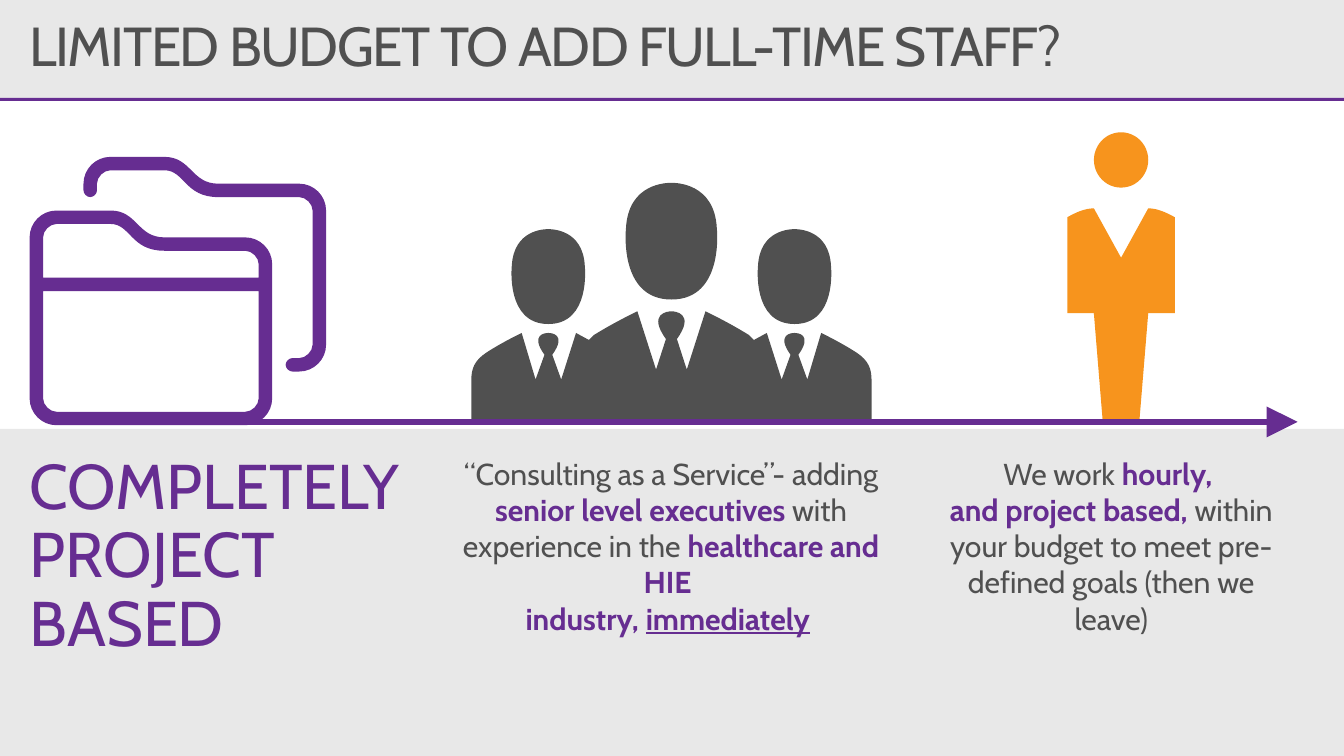
import lxml.etree
import pptx
import pptx.dml.color
import pptx.enum.shapes
import pptx.enum.text
import pptx.oxml.ns
import pptx.util

Pt = pptx.util.Pt
qn = pptx.oxml.ns.qn
ALIGN = pptx.enum.text.PP_ALIGN
SHAPES = pptx.enum.shapes.MSO_SHAPE
WIDTH, HEIGHT = 979.2, 550.8
GROUND = 307.4
COLORS = {"purple": "662D91", "gray": "505050", "band": "E8E8E8", "orange": "F7941D"}

# Outlines: a pair is a corner, six numbers are a curve.
# The folder lies on a grid of 22 by 20 units.
FOLDER = [
    [(16, 6), (10, 6), (8, 6, 8, 4, 6, 4), (2, 4), (0.9, 4, 0, 4.9, 0, 6), (0, 18),
     (0, 19.1, 0.9, 20, 2, 20), (16, 20), (17.1, 20, 18, 19.1, 18, 18), (18, 8),
     (18, 6.9, 17.1, 6, 16, 6)],
    [(17, 18), (17, 18.5, 16.5, 19, 16, 19), (2, 19), (1.5, 19, 1, 18.5, 1, 18),
     (1, 10), (17, 10)],
    [(17, 9), (1, 9), (1, 6), (1, 5.5, 1.5, 5, 2, 5), (6, 5), (7.5, 5, 7.5, 7, 10, 7),
     (16, 7), (16.5, 7, 17, 7.5, 17, 8)],
    [(20, 2), (14, 2), (12, 2, 12, 0, 10, 0), (6, 0), (4.9, 0, 4, 0.9, 4, 2), (4, 2.5),
     (4, 2.75, 4.25, 3, 4.5, 3), (4.75, 3, 5, 2.75, 5, 2.5), (5, 2),
     (5, 1.5, 5.5, 1, 6, 1), (10, 1), (11.5, 1, 11.5, 3, 14, 3), (20, 3),
     (20.5, 3, 21, 3.5, 21, 4), (21, 14), (21, 14.5, 20.5, 15, 20, 15), (19.5, 15),
     (19.25, 15, 19, 15.25, 19, 15.5), (19, 15.75, 19.25, 16, 19.5, 16), (20, 16),
     (21.1, 16, 22, 15.1, 22, 14), (22, 4), (22, 2.9, 21.1, 2, 20, 2)],
]
# Right halves, measured from the axis of symmetry
HALF_HEAD = [(0, 1), (1.17, 1, 1, 0.39, 1, 0.39), (0.95, 0, 0.09, 0, 0, 0)]
HALF_TEAM = [
    (0, 93.6), (2.5, 93.6, 17.6, 95, 4, 113.8), (11.2, 136.1), (24.8, 93.6),
    (24.8, 93.6, 41.4, 101.5, 56.5, 110.9), (60.1, 114.5), (69.5, 109.4), (80.3, 143.3),
    (86.8, 125.3), (76, 110.2, 87.5, 109.4, 89.7, 109.4),
    (91.8, 109.4, 103.3, 110.2, 92.5, 125.3), (99, 143.3), (109.1, 109.4),
    (109.1, 109.4, 122.8, 115.9, 135, 123.8), (143.6, 129.6, 145.8, 135.4, 145.8, 144),
    (145.8, 174.2),
]
HALF_SUIT = [(0, 91.4), (19.8, 55.4), (26.3, 55.4, 32.8, 58.3, 39.2, 61.9),
             (39.2, 131.8), (19.8, 131.8), (13.3, 211)]


def rgb(name):
    return pptx.dml.color.RGBColor.from_string(COLORS[name])


def pairs(step):
    return list(zip(step[::2], step[1::2]))


def mirror(steps):
    """Close a right half with the same steps run backwards on the left."""
    end_x, end_y = pairs(steps[-1])[-1]
    full = steps + ([(-end_x, end_y)] if end_x else [])
    for before, step in reversed(list(zip(steps, steps[1:]))):
        points = pairs(step)[-2::-1] + [pairs(before)[-1]]
        full.append(tuple(value for x, y in points for value in (-x, y)))
    return full


def paint(shape, color):
    shape.fill.solid()
    shape.fill.fore_color.rgb = rgb(color)
    shape.line.fill.background()
    shape.shadow.inherit = False


def add_block(shapes, kind, box, color):
    paint(shapes.add_shape(kind, *map(Pt, box)), color)


def bend(shape, contours):
    """Join the three segments that stand for each curve into one."""
    outline = next(shape._element.iter(qn("a:path")))
    segments = iter(outline.findall(qn("a:lnTo")))
    for contour in contours:
        for step in contour[1:]:
            first, *others = [next(segments) for _ in pairs(step)]
            if others:
                first.tag = qn("a:cubicBezTo")
            for other in others:
                first.append(other[0])
                outline.remove(other)


def add_outline(shapes, contours, left, top, color, scale_x=1, scale_y=1):
    builder = None
    for contour in contours:
        points = [(Pt(left + x * scale_x), Pt(top + y * scale_y))
                  for step in contour for x, y in pairs(step)]
        if builder is None:
            builder = shapes.build_freeform(*points[0], scale=1.0)
        else:
            builder.move_to(*points[0])
        builder.add_line_segments(points[1:], close=True)
    shape = builder.convert_to_shape()
    bend(shape, contours)
    paint(shape, color)


def add_text(page, box, lines, size, color, align=ALIGN.LEFT, spacing=1.0):
    """Each line is a list of (text, style); style holds b for bold purple, u for underline."""
    frame = page.shapes.add_textbox(*map(Pt, box)).text_frame
    frame.margin_left = frame.margin_right = frame.margin_top = frame.margin_bottom = 0
    frame.word_wrap = True
    para = frame.paragraphs[0]
    para.alignment = align
    para.line_spacing = spacing
    for number, line in enumerate(lines):
        if number:
            para.add_line_break()
        for text, style in line:
            span = para.add_run()
            span.text = text
            span.font.name = "Cabin"
            span.font.size = Pt(size)
            span.font.color.rgb = rgb("purple" if "b" in style else color)
            span.font.bold = "b" in style
            span.font.underline = "u" in style
    return frame


def add_header(page, left, top, width, height):
    add_block(page.shapes, SHAPES.RECTANGLE, (left, top, width, height), "band")
    add_block(page.shapes, SHAPES.RECTANGLE, (left, top + height, width, 2.2), "purple")
    frame = add_text(page, (left + 21.6, top, 779.8, height),
                     [[("LIMITED BUDGET TO ADD FULL-TIME STAFF?", "")]],
                     40, "gray", spacing=0.9)
    frame.vertical_anchor = pptx.enum.text.MSO_ANCHOR.MIDDLE
    frame.paragraphs[0].runs[0]._r.get_or_add_rPr().set("spc", "-104")


def add_team(page, left, top, width):
    shapes = page.shapes.add_group_shape().shapes
    center = left + width / 2
    for offset, drop, half_width, height in ((0, 0, 33.1, 85), (89.7, 33.8, 26.6, 69.1),
                                             (-89.7, 33.8, 26.6, 69.1)):
        add_outline(shapes, [mirror(HALF_HEAD)], center + offset, top + drop, "gray",
                    half_width, height)
    add_outline(shapes, [mirror(HALF_TEAM)], center, top, "gray")


def add_worker(page, left, top, width):
    shapes = page.shapes.add_group_shape().shapes
    center = left + width / 2
    add_block(shapes, SHAPES.OVAL, (center - 19.8, top, 39.6, 40.3), "orange")
    add_outline(shapes, [mirror(HALF_SUIT)], center, top, "orange")


def add_folder(page, left, top, width, height):
    add_outline(page.shapes, FOLDER, left, top, "purple", width / 22, height / 20)


def add_arrow(page, left, right, y):
    arrow = page.shapes.add_connector(pptx.enum.shapes.MSO_CONNECTOR.STRAIGHT,
                                      Pt(left), Pt(y), Pt(right), Pt(y))
    arrow.line.color.rgb = rgb("purple")
    arrow.line.width = Pt(4.5)
    lxml.etree.SubElement(arrow.line._get_or_add_ln(), qn("a:tailEnd"),
                          type="triangle", w="lg", len="lg")
    lxml.etree.SubElement(arrow._element.spPr, qn("a:effectLst"))


def add_captions(page, left, top):
    add_text(page, (left + 21.6, top, 290, 51.8),
             [[("COMPLETELY ", "")], [("PROJECT", "")], [("BASED", "")]],
             46, "purple", spacing=0.9)
    add_text(page, (left + 685.4, top, 248.4, 67.7), [
        [("We work ", ""), ("hourly, ", "b")],
        [("and project based, ", "b"),
         ("within your budget to meet pre-defined goals (then we leave)", "")],
    ], 22, "gray", ALIGN.CENTER)
    add_text(page, (left + 333.4, top, 311, 67.7), [
        [("“Consulting as a Service”- adding ", ""), ("senior level executives", "b"),
         (" with experience in the ", ""), ("healthcare and HIE ", "b")],
        [("industry, ", "b"), ("immediately", "bu"), (" ", "b")],
    ], 22, "gray", ALIGN.CENTER)


def main():
    deck = pptx.Presentation()
    deck.slide_width, deck.slide_height = Pt(WIDTH), Pt(HEIGHT)
    page = deck.slides.add_slide(deck.slide_layouts[6])
    add_header(page, 0, 0, WIDTH, 71.3)
    # Lower band
    add_block(page.shapes, SHAPES.RECTANGLE, (0, 312.5, WIDTH, HEIGHT - 312.5), "band")
    # Icons standing on the arrow
    add_team(page, 343.4, GROUND - 174.2, 291.6)
    add_worker(page, 777.6, GROUND - 211, 78.4)
    add_arrow(page, 111.6, 945.4, GROUND)
    add_folder(page, 21.6, 114.3, 216, 195.5)
    add_captions(page, 0, 331.5)
    deck.save("out.pptx")


if __name__ == "__main__":
    main()
